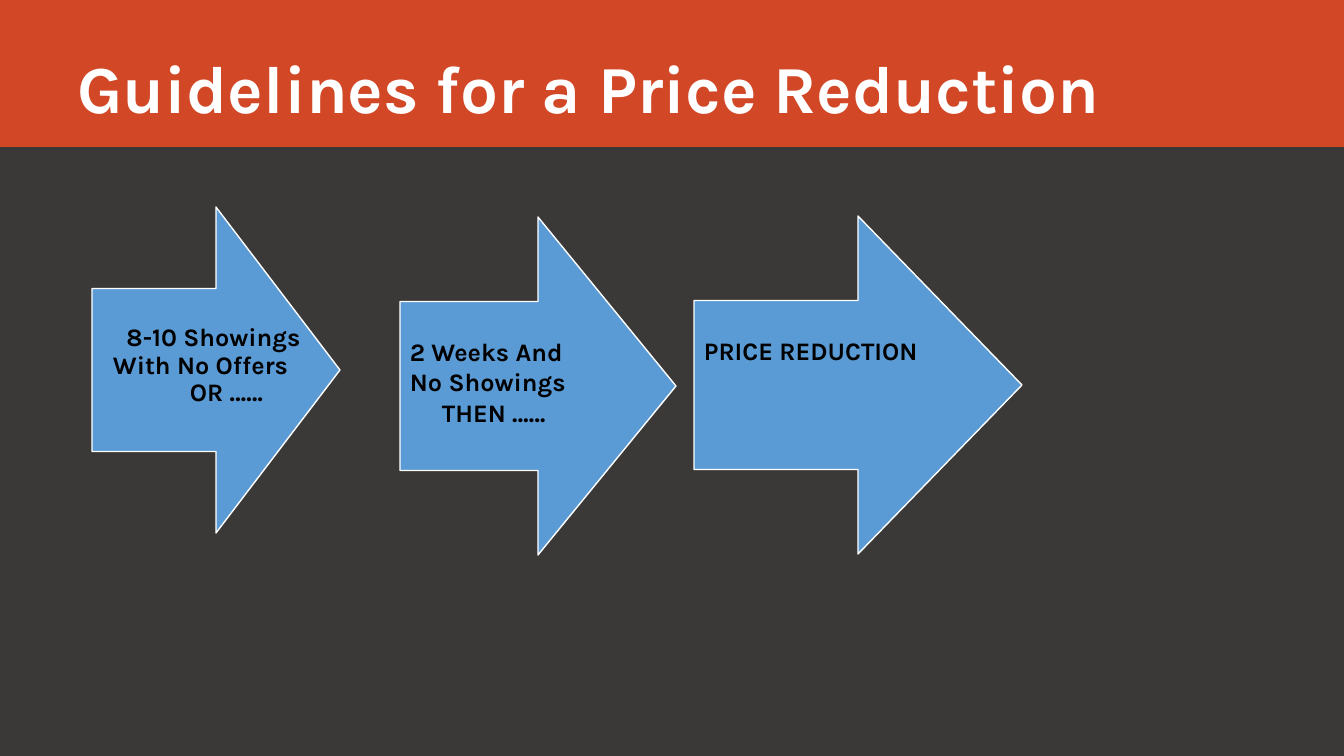
from lxml import etree
from pptx import Presentation
from pptx.dml.color import RGBColor
from pptx.enum.shapes import MSO_SHAPE
from pptx.enum.text import MSO_ANCHOR, PP_ALIGN
from pptx.util import Emu, Pt

RECTANGLE, RIGHT_ARROW = MSO_SHAPE.RECTANGLE, MSO_SHAPE.RIGHT_ARROW
TOP, MIDDLE, BOTTOM = MSO_ANCHOR.TOP, MSO_ANCHOR.MIDDLE, MSO_ANCHOR.BOTTOM
LEFT, CENTER = PP_ALIGN.LEFT, PP_ALIGN.CENTER

CHARCOAL = RGBColor(0x3B, 0x38, 0x38)
ORANGE = RGBColor(0xD2, 0x47, 0x26)
BLUE = RGBColor(0x5B, 0x9B, 0xD5)
WHITE = RGBColor(0xFF, 0xFF, 0xFF)
BLACK = RGBColor(0, 0, 0)


def px(count):
    """Turn pixels into EMU; the slide is 1344 px wide."""
    return Emu(round(count * 12192000 / 1344))


def write(frame, lines, size, color, align=LEFT, spacing=1.0):
    """Fill the frame with (text, left margin, right margin) paragraphs."""
    frame.word_wrap = True
    for index, (text, margin_left, margin_right) in enumerate(lines):
        para = frame.paragraphs[0] if index == 0 else frame.add_paragraph()
        para.text = text
        para.alignment = align
        para.line_spacing = spacing
        para.space_before = para.space_after = Pt(0)
        properties = para._p.get_or_add_pPr()
        properties.set("marL", str(px(margin_left)))
        properties.set("marR", str(px(margin_right)))
        properties.set("indent", "0")
        para.font.name = "Karla"
        para.font.size = Pt(size)
        para.font.bold = True
        para.font.color.rgb = color


deck = Presentation()
deck.slide_width, deck.slide_height = px(1344), px(756)
page = deck.slides.add_slide(deck.slide_layouts[5])
page.background.fill.solid()
page.background.fill.fore_color.rgb = CHARCOAL

# Title band
band = page.shapes.add_shape(RECTANGLE, 0, 0, px(1344), px(147))
band.shadow.inherit = False
band.fill.solid()
band.fill.fore_color.rgb = ORANGE
band.line.fill.background()
page.shapes._spTree.insert(2, band._element)

title = page.shapes.title
title.left, title.top, title.width, title.height = px(67), px(0), px(1185), px(133)
title.text_frame.vertical_anchor = BOTTOM
write(title.text_frame, [("Guidelines for a Price Reduction", 0, 0)], 48, WHITE, spacing=0.9)

# Arrows: left, top, width, height, lines
ARROWS = [
    (92, 207, 248, 326, []),
    (400, 217, 276, 338, [("2 Weeks And No Showings", 0, 0), ("THEN ……", 32, 0)]),
    (694, 216, 328, 338, [("PRICE REDUCTION", 0, 0)]),
]
for left, top, width, height, lines in ARROWS:
    arrow = page.shapes.add_shape(RIGHT_ARROW, px(left), px(top), px(width), px(height))
    arrow.shadow.inherit = False
    arrow.fill.solid()
    arrow.fill.fore_color.rgb = BLUE
    arrow.line.color.rgb = WHITE
    arrow.line.width = Pt(1)
    frame = arrow.text_frame
    frame.vertical_anchor = TOP
    frame.margin_top = px(35)
    write(frame, lines, 18, BLACK)

# The first arrow's label reaches into its head
label = page.shapes.add_textbox(px(112), px(285), px(203), px(162))
frame = label.text_frame
frame.vertical_anchor = MIDDLE
frame.margin_left = frame.margin_right = 0
frame.margin_top = frame.margin_bottom = px(20)
write(
    frame,
    [("8-10 Showings", 0, 0), ("With No Offers", 0, 26), ("OR ……", 26, 0)],
    18, BLACK, CENTER, 0.9,
)

deck.save("out.pptx")
